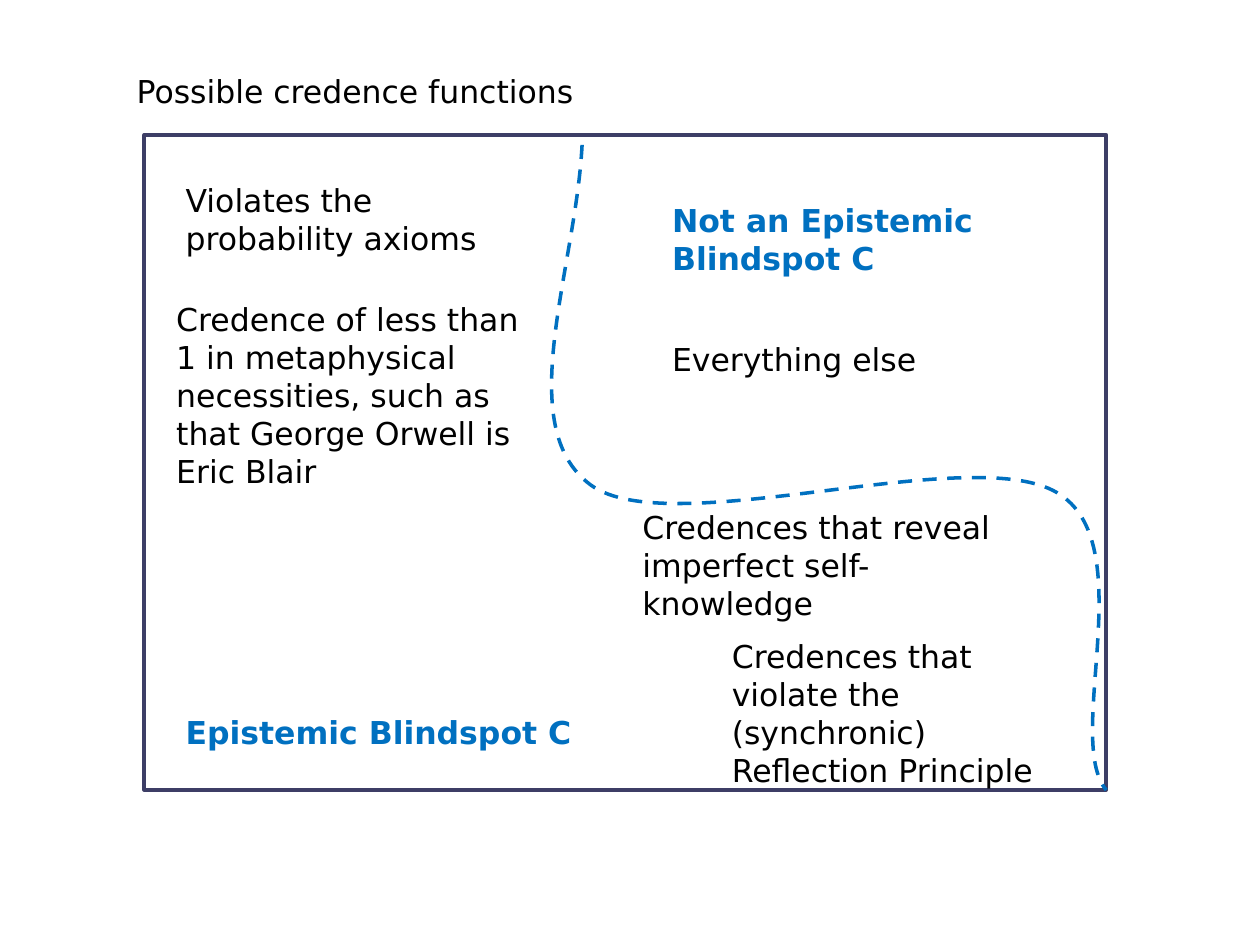
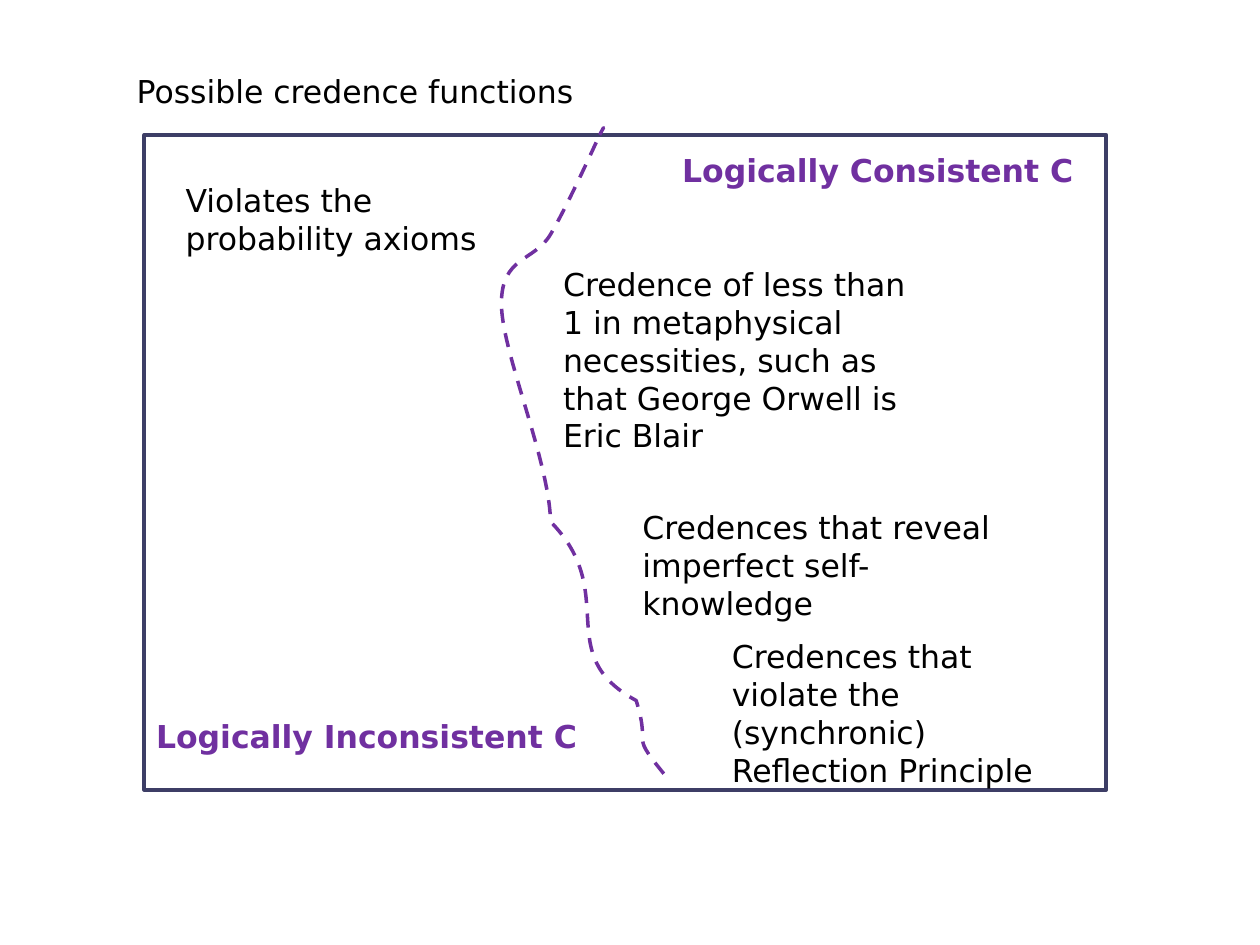
from lxml import etree
from pptx import Presentation
from pptx import util as u
from pptx.dml import color
from pptx.enum import dml, shapes, text
from pptx.oxml import ns

prs = Presentation()
prs.slide_width, prs.slide_height = u.Inches(10), u.Inches(7.5)
cell = prs.slide_width // 100

INK, FRAME, BLUE, PURPLE = "000000", "3D3E66", "0070C0", "7030A0"
FRAME_FMT = {"left": 11.45, "top": 10.7, "width": 76.35, "height": 52}
TITLE_FMT = {"left": 9.85, "top": 5.2, "width": 40.2, "height": 4}
FRAME_TEXT_FMT = {
    "word_wrap": True,
    "auto_size": text.MSO_AUTO_SIZE.SHAPE_TO_FIT_TEXT,
    "vertical_anchor": text.MSO_ANCHOR.TOP,
}

AXIOMS = ("Violates the probability axioms", 13.75, 13.9, 29.9, 7.1, INK)
SELF_KNOWLEDGE = ("Credences that reveal imperfect self-knowledge", 50, 39.85, 29.9, 10.1, INK)
REFLECTION = ("Credences that violate the (synchronic) Reflection Principle",
              57.1, 50.1, 29.9, 13.1, INK)
NECESSITIES = ("Credence of less than 1 in metaphysical necessities, "
               "such as that George Orwell is Eric Blair")

diagrams = [
    {
        "accent": BLUE,
        "start": (46.2, 11.5),
        "curves": [
            (45.7, 21.4), (40.6, 33.9), (46.9, 38.5),
            (53.2, 43.1), (77, 35), (83.9, 39.1),
            (90.7, 43.1), (84.4, 58.6), (87.8, 62.7),
        ],
        "labels": [
            ("Not an Epistemic Blindspot C", 52.35, 15.45, 33.1, 7.1, BLUE),
            ("Epistemic Blindspot C", 13.75, 56.1, 43.3, 4, BLUE),
            (NECESSITIES, 13, 23.35, 31.5, 16.2, INK),
            AXIOMS,
            ("Everything else", 52.35, 26.5, 29.9, 4, INK),
            SELF_KNOWLEDGE,
            REFLECTION,
        ],
    },
    {
        "accent": PURPLE,
        "start": (47.6, 10.7),
        "curves": [
            (47.6, 10.7), (48.3, 9.4), (47.6, 10.7),
            (47, 12), (45, 16.4), (43.7, 18.6),
            (42.4, 20.8), (39.8, 20.3), (39.8, 24.1),
            (39.8, 27.9), (43.6, 36.5), (43.7, 41.4),
            (49.3, 47.1), (43.7, 51.9), (50.5, 55.6),
            (51.8, 59.8), (49.7, 57.8), (53.1, 61.9),
        ],
        "labels": [
            ("Logically Consistent C", 53.15, 11.5, 33.1, 4, PURPLE),
            ("Logically Inconsistent C", 11.4, 56.4, 43.3, 4, PURPLE),
            (NECESSITIES, 43.7, 20.55, 31.5, 16.2, INK),
            AXIOMS,
            SELF_KNOWLEDGE,
            REFLECTION,
        ],
    },
]


def rgb(value):
    return color.RGBColor.from_string(value)


def write(s, words, value):
    tf = s.text_frame
    for name, setting in FRAME_TEXT_FMT.items():
        setattr(tf, name, setting)
    p = tf.paragraphs[0]
    p.alignment = text.PP_ALIGN.LEFT
    r = p.add_run()
    r.text = words
    font_fmt = {"name": "DejaVu Sans", "size": u.Pt(18), "bold": value != INK}
    for name, setting in font_fmt.items():
        setattr(r.font, name, setting)
    r.font.color.rgb = rgb(value)


for diagram in diagrams:
    s = prs.slides.add_slide(prs.slide_layouts[5])
    title = s.shapes.title
    for name, cells in TITLE_FMT.items():
        setattr(title, name, round(cells * cell))
    write(title, "Possible credence functions", INK)

    frame = s.shapes.add_shape(
        shapes.MSO_SHAPE.RECTANGLE, *(round(c * cell) for c in FRAME_FMT.values()))

    start, *controls = [(round(x * cell), round(y * cell))
                        for x, y in [diagram["start"], *diagram["curves"]]]
    builder = s.shapes.build_freeform(*start)
    builder.add_line_segments(controls, close=False)
    boundary = builder.convert_to_shape()
    outline = boundary.element.find(".//" + ns.qn("a:path"))
    segments = outline.findall(ns.qn("a:lnTo"))
    for i in range(0, len(segments), 3):
        curve = etree.SubElement(outline, ns.qn("a:cubicBezTo"))
        for segment in segments[i:i + 3]:
            curve.append(segment[0])
            outline.remove(segment)

    for sp, value, dash in ((frame, FRAME, None),
                            (boundary, diagram["accent"], dml.MSO_LINE.DASH)):
        sp.shadow.inherit = False
        sp.fill.background()
        sp.line.color.rgb = rgb(value)
        for name, setting in {"width": u.Pt(2), "dash_style": dash}.items():
            setattr(sp.line, name, setting)

    for words, x, y, w, h, value in diagram["labels"]:
        box = s.shapes.add_textbox(*(round(c * cell) for c in (x, y, w, h)))
        write(box, words, value)

prs.save("out.pptx")
